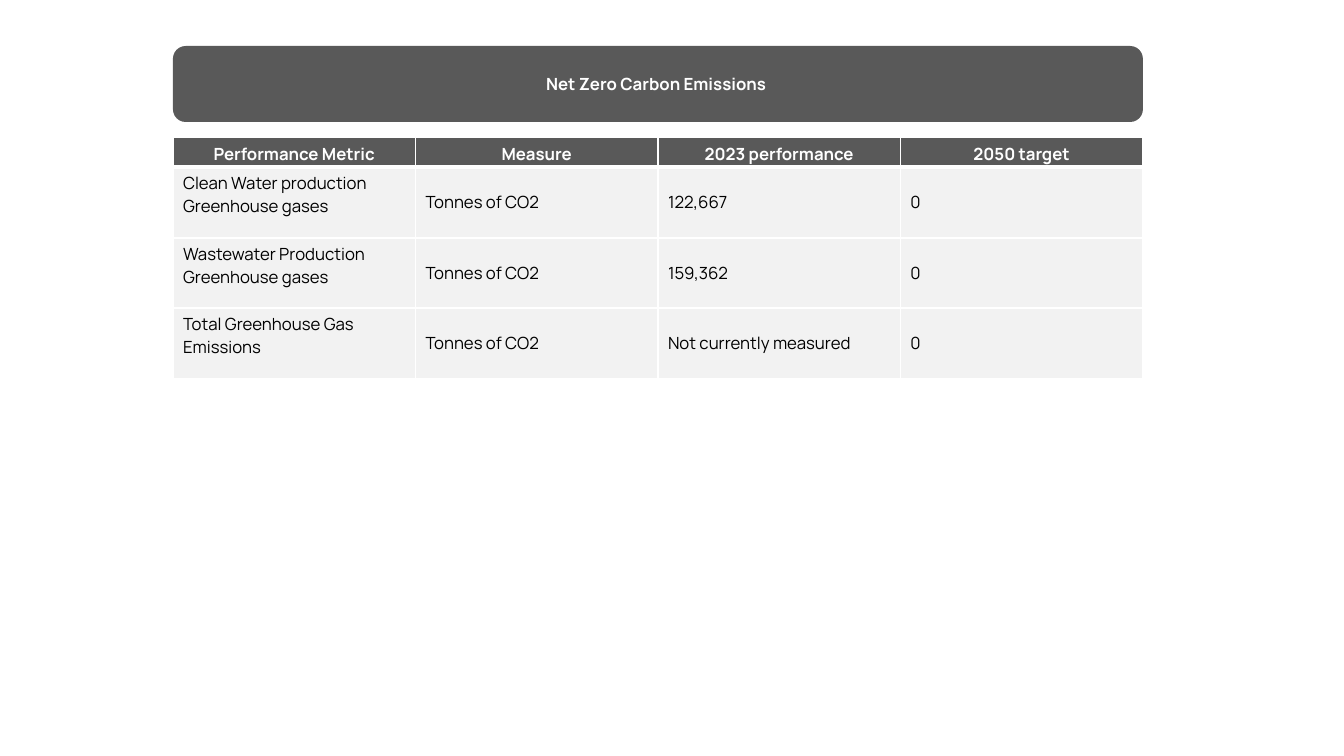
from pptx import Presentation
from pptx.dml.color import RGBColor
from pptx.enum.shapes import MSO_SHAPE as SHAPE
from pptx.enum.text import MSO_ANCHOR as ANCHOR, PP_ALIGN as ALIGN
from pptx.oxml import parse_xml
from pptx.oxml.ns import nsdecls
from pptx.util import Pt

PX = 914400 / 100.8
GREY, PALE, WHITE, BLACK = "595959", "F2F2F2", "FFFFFF", "000000"
LEFT, WIDTH = round(173 * PX), round(970 * PX)
HEADER = {"color": WHITE, "bold": True, "align": ALIGN.CENTER}
BODY = {"color": BLACK, "bold": False, "align": ALIGN.LEFT}


def rgb(value):
    return RGBColor.from_string(value)


def write(tf, text, fmt):
    p = tf.paragraphs[0]
    p.alignment = fmt["align"]
    r = p.add_run()
    r.text = text
    for name, value in {"name": "Manrope", "size": Pt(12), "bold": fmt["bold"]}.items():
        setattr(r.font, name, value)
    r.font.color.rgb = rgb(fmt["color"])


prs = Presentation()
prs.slide_width, prs.slide_height = round(1344 * PX), round(756 * PX)
s = prs.slides.add_slide(prs.slide_layouts[6])

rows = [
    ["Performance Metric", "Measure", "2023 performance", "2050 target"],
    ["Clean Water production Greenhouse gases", "Tonnes of CO2", "122,667", "0"],
    ["Wastewater Production Greenhouse gases", "Tonnes of CO2", "159,362", "0"],
    ["Total Greenhouse Gas Emissions", "Tonnes of CO2", "Not currently measured", "0"],
]
heights = [30, 71, 70, 71]
table = s.shapes.add_table(
    len(rows), len(rows[0]), LEFT, round(137 * PX), WIDTH, round(sum(heights) * PX)
).table
for col in table.columns:
    col.width = WIDTH // len(rows[0])

for i, (texts, height) in enumerate(zip(rows, heights)):
    table.rows[i].height = round(height * PX)
    header = i == 0
    for j, text in enumerate(texts):
        cell = table.cell(i, j)
        write(cell.text_frame, text, HEADER if header else BODY)
        cell.vertical_anchor = ANCHOR.TOP if header or j == 0 else ANCHOR.MIDDLE
        if header:
            cell.margin_bottom = 0
        borders = {"L": 1, "R": 1, "T": 3 if i == 1 else 1, "B": 3 if header else 1}
        for side, width in borders.items():
            cell._tc.get_or_add_tcPr().append(parse_xml(
                f'<a:ln{side} {nsdecls("a")} w="{Pt(width)}"><a:solidFill>'
                f'<a:srgbClr val="{WHITE}"/></a:solidFill></a:ln{side}>'
            ))
        cell.fill.solid()
        cell.fill.fore_color.rgb = rgb(GREY if header else PALE)

banner = s.shapes.add_shape(
    SHAPE.ROUNDED_RECTANGLE, LEFT, round(46 * PX), WIDTH, round(76 * PX)
)
banner.shadow.inherit = False
banner.fill.solid()
banner.fill.fore_color.rgb = rgb(GREY)
banner.line.fill.background()
banner.text_frame.word_wrap = True
banner.text_frame.vertical_anchor = ANCHOR.MIDDLE
write(banner.text_frame, "Net Zero Carbon Emissions ", HEADER)

prs.save("out.pptx")
